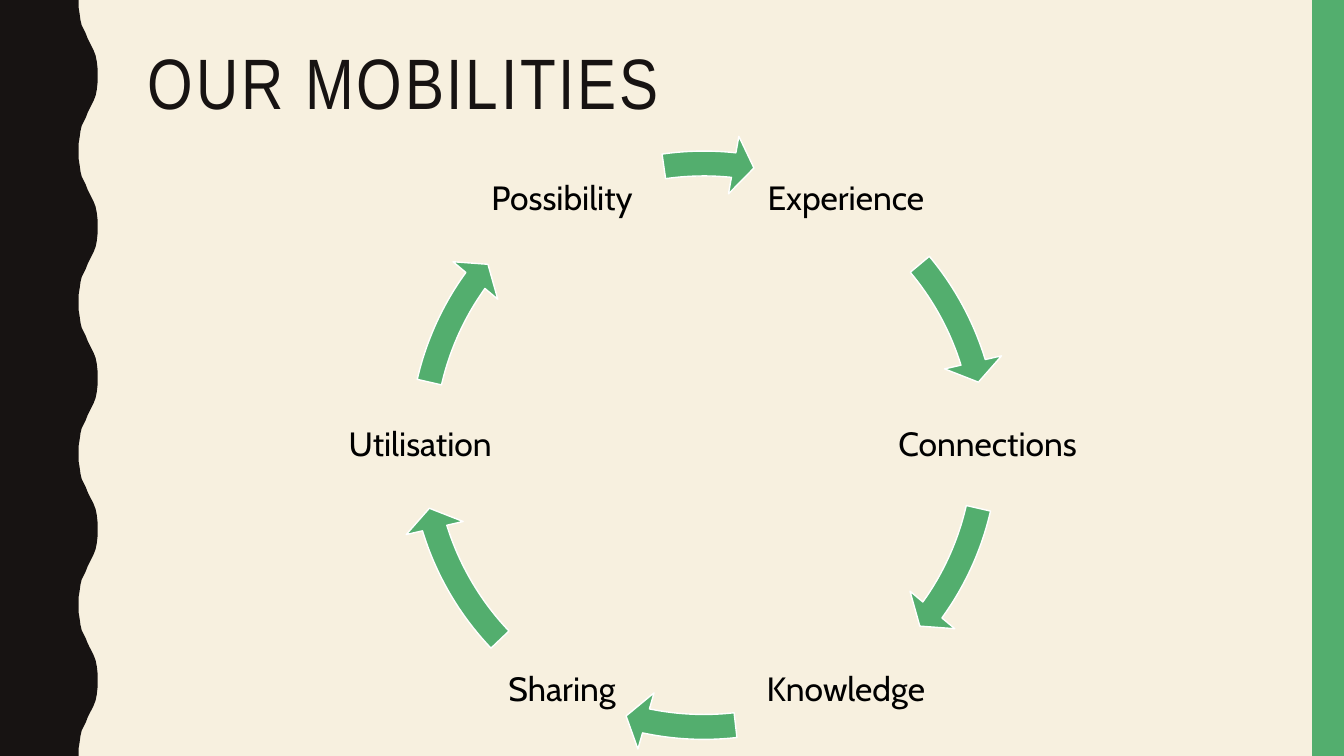
"""Build the "Our mobilities" slide: a cycle of six labels joined by arrows."""
import math

from pptx import Presentation
from pptx.dml.color import RGBColor
from pptx.enum.shapes import MSO_SHAPE
from pptx.enum.text import MSO_ANCHOR, PP_ALIGN
from pptx.util import Cm, Pt

RECT, ARROW = MSO_SHAPE.RECTANGLE, MSO_SHAPE.CIRCULAR_ARROW
TOP, MIDDLE = MSO_ANCHOR.TOP, MSO_ANCHOR.MIDDLE
LEFT, CENTER = PP_ALIGN.LEFT, PP_ALIGN.CENTER
CREAM, DARK, GREEN, WHITE, BLACK = "F7F0DF", "171312", "53AE6E", "FFFFFF", "000000"
WIDTH, HEIGHT = 33.87, 19.05


def paint(sp, fill, line=None):
    sp.shadow.inherit = False
    sp.fill.solid()
    sp.fill.fore_color.rgb = RGBColor.from_string(fill)
    if line:
        sp.line.color.rgb = RGBColor.from_string(line)
        sp.line.width = Pt(1)
    else:
        sp.line.fill.background()


def add_text(text, box, anchor, align, inset, font, color):
    tf = s.shapes.add_textbox(*map(Cm, box)).text_frame
    tf.word_wrap = True
    tf.vertical_anchor = anchor
    for side, margin in inset.items():
        setattr(tf, "margin_" + side, Cm(margin))
    p = tf.paragraphs[0]
    p.alignment = align
    p.line_spacing = 0.9
    r = p.add_run()
    r.text = text
    for name, value in font.items():
        setattr(r.font, name, value)
    r.font.color.rgb = RGBColor.from_string(color)
    return r


prs = Presentation()
prs.slide_width, prs.slide_height = Cm(WIDTH), Cm(HEIGHT)
s = prs.slides.add_slide(prs.slide_layouts[6])
s.background.fill.solid()
s.background.fill.fore_color.rgb = RGBColor.from_string(CREAM)

period = 3.81
rise = [(1.98, 0), (1.98, 0.18), (2.01, 0.36), (2.03, 0.51), (2.06, 0.64),
        (2.11, 0.74), (2.16, 0.84), (2.21, 0.97), (2.26, 1.07), (2.31, 1.17),
        (2.36, 1.27), (2.41, 1.4), (2.44, 1.55), (2.46, 1.73), (2.46, 1.9)]
wave = rise + [(x, period - y) for x, y in reversed(rise)]
edge = [(x, y + i * period) for i in range(5) for x, y in wave]
outline = s.shapes.build_freeform(0, 0)
outline.add_line_segments([(Cm(x), Cm(y)) for x, y in edge + [(0, HEIGHT)]])
paint(outline.convert_to_shape(), DARK)

bar = s.shapes.add_shape(RECT, Cm(33.07), 0, Cm(0.8), Cm(HEIGHT))
paint(bar, GREEN)

title = add_text("OUR MOBILITIES", (3.48, 1.07, 28.27, 3.38), TOP, LEFT, {},
                 {"name": "Arial Narrow", "size": Pt(51)}, DARK)
title.font._element.set("spc", "200")

cx, cy, radius = 17.74, 11.22, 7.15
size, label_height = 15.67, 3.2
inset = dict.fromkeys(("left", "top", "right", "bottom"), 0.08)
label_font = {"name": "Cabin", "size": Pt(24)}
steps = [("Experience", 4.62, 205.737, 192.028),
         ("Connections", 5.08, 21.471, 7.761),
         ("Knowledge", 5.54, 61.117, 50.131),
         ("Sharing", 3.2, 97.737, 81.824),
         ("Utilisation", 5.59, 129.471, 115.761),
         ("Possibility", 5.13, 165.642, 157.097)]
for i, (label, width, head, tail) in enumerate(steps):
    angle = math.radians(60 * i - 60)
    x = cx + radius * math.cos(angle) - width / 2
    y = cy + radius * math.sin(angle) - label_height / 2
    add_text(label, (x, y, width, label_height), MIDDLE, CENTER, inset, label_font, BLACK)
    sp = s.shapes.add_shape(ARROW, Cm(cx - size / 2), Cm(cy - size / 2), Cm(size), Cm(size))
    for n, value in enumerate((0.04, 2.502, head, tail, 0.047)):
        sp.adjustments[n] = value
    paint(sp, GREEN, WHITE)

prs.save("out.pptx")
